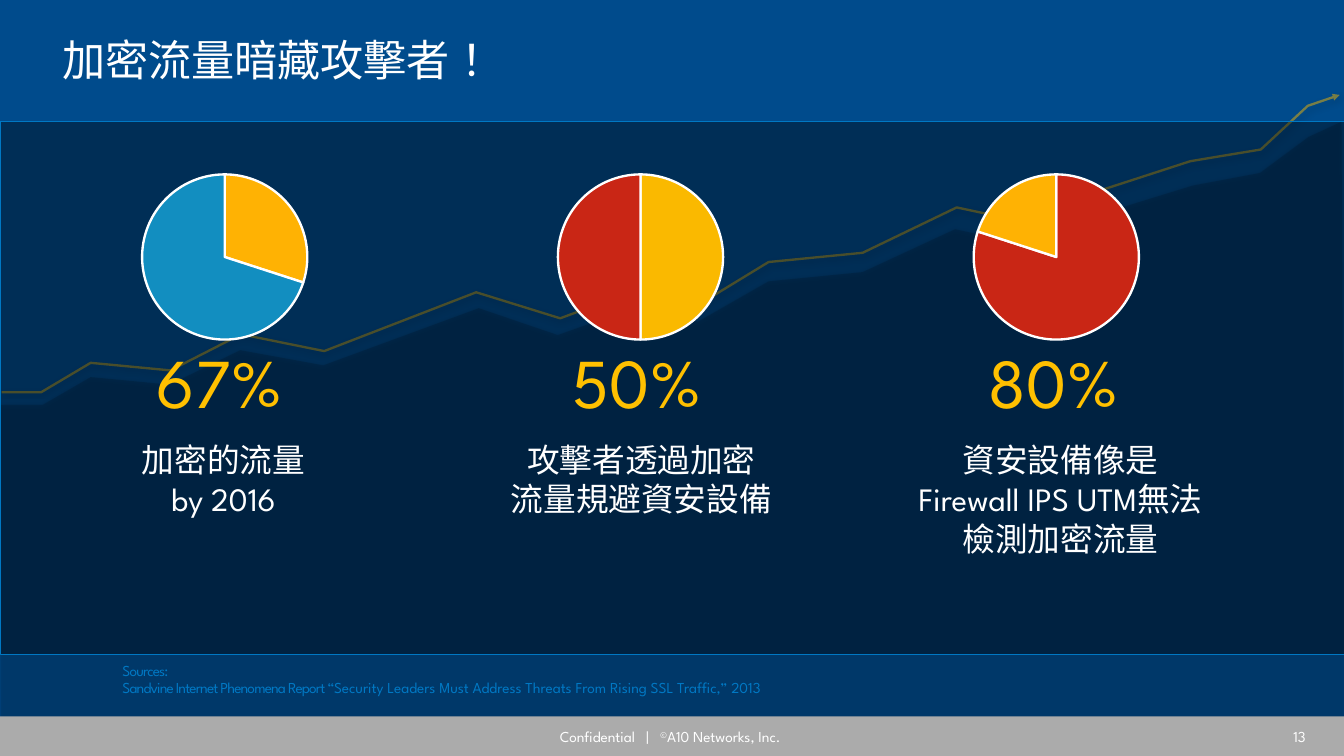
from lxml.etree import SubElement
from pptx import Presentation
from pptx.chart.data import CategoryChartData
from pptx.dml.color import RGBColor
from pptx.enum.chart import XL_CHART_TYPE as ChartType
from pptx.enum.shapes import MSO_SHAPE as Preset
from pptx.enum.text import MSO_ANCHOR as Anchor
from pptx.enum.text import MSO_AUTO_SIZE as AutoSize
from pptx.enum.text import PP_ALIGN as Align
from pptx.oxml import parse_xml
from pptx.oxml.ns import nsdecls, qn
from pptx.util import Inches, Pt

FONT = "League Spartan"
WHITE = RGBColor(0xFF, 0xFF, 0xFF)
BLACK = RGBColor(0, 0, 0)
BACKGROUND = RGBColor(0x00, 0x4B, 0x8C)
NAVY = RGBColor(0x00, 0x38, 0x69)
BRIGHT_BLUE = RGBColor(0x00, 0x78, 0xC3)
GRAY = RGBColor(0xAB, 0xAB, 0xAB)
GOLD = RGBColor(0xFA, 0xB9, 0x00)
AMBER = RGBColor(0xFF, 0xB2, 0x03)
YELLOW = RGBColor(0xFF, 0xC0, 0x00)
RED = RGBColor(0xC9, 0x26, 0x15)
CYAN = RGBColor(0x12, 0x8E, 0xC0)

TREND = [
    (0.02, 4.67), (0.49, 4.67), (1.08, 4.32), (2.03, 4.41), (2.87, 3.98),
    (3.86, 4.18), (5.67, 3.48), (6.67, 3.79), (7.58, 3.45), (8.33, 3.62),
    (9.15, 3.12), (10.27, 3.01), (11.39, 2.47), (12.14, 2.63), (12.66, 2.41),
    (14.17, 1.92), (15.01, 1.78), (15.57, 1.26), (15.95, 1.13),
]
MOUNTAIN = [
    (0, 4.82), (0.51, 4.82), (1.08, 4.49), (2.02, 4.58), (2.86, 4.17),
    (3.85, 4.35), (5.7, 3.67), (6.64, 3.99), (7.54, 3.67), (8.31, 3.83),
    (9.15, 3.35), (10.27, 3.24), (11.37, 2.73), (12.12, 2.89), (12.61, 2.7),
    (14.2, 2.21), (15, 2.06), (15.58, 1.63), (15.97, 1.45),
    (16.01, 8.59), (0.01, 8.55),
]

# Share, slice values, slice colours, caption paragraphs, caption left and width
FACTS = [
    ("67%", (30, 70), (AMBER, CYAN), ["加密的流量", "by 2016"], 1.3, 2.72),
    ("50%", (50, 50), (GOLD, RED), ["攻擊者透過加密", "流量規避資安設備"], 5.84, 3.59),
    ("80%", (80, 20), (RED, AMBER),
     ["資安設備像是Firewall IPS UTM無法檢測加密流量"], 10.83, 3.59),
]
FIRST_PIE, PIE_STEP = 1.49, 4.95


def inches(lengths):
    return [Inches(length) for length in lengths]


def add_text(slide, box, paragraphs, size, color=WHITE, align=Align.LEFT,
             anchor=Anchor.TOP, wrap=True, grow=False, inset=None,
             line_spacing=None):
    """Each paragraph is a string or a list of (text, run attributes)."""
    frame = slide.shapes.add_textbox(*inches(box)).text_frame
    frame.word_wrap = wrap
    frame.auto_size = AutoSize.SHAPE_TO_FIT_TEXT if grow else AutoSize.NONE
    frame.vertical_anchor = anchor
    if inset is not None:
        frame.margin_left = frame.margin_right = Inches(inset)
        frame.margin_top = frame.margin_bottom = Inches(inset)
    for index, content in enumerate(paragraphs):
        paragraph = frame.add_paragraph() if index else frame.paragraphs[0]
        paragraph.alignment = align
        paragraph.line_spacing = line_spacing
        runs = [(content, {})] if isinstance(content, str) else content
        for text, attributes in runs:
            run = paragraph.add_run()
            run.text = text
            run.font.name = FONT
            run.font.size = Pt(size)
            run.font.color.rgb = color
            for name, value in attributes.items():
                run._r.get_or_add_rPr().set(name, value)


def set_alpha(parent, percent):
    for color in parent.iter(qn("a:srgbClr")):
        SubElement(color, qn("a:alpha")).set("val", str(percent * 1000))


def style_shape(shape, fill=None, alpha=None, line=None, width=0.75):
    shape.shadow.inherit = False
    if fill is None:
        shape.fill.background()
    else:
        shape.fill.solid()
        shape.fill.fore_color.rgb = fill
        if alpha:
            set_alpha(shape._element.spPr.find(qn("a:solidFill")), alpha)
    if line is None:
        shape.line.fill.background()
    else:
        shape.line.color.rgb = line
        shape.line.width = Pt(width)


def add_panel(slide, preset, box, **style):
    panel = slide.shapes.add_shape(preset, *inches(box))
    style_shape(panel, **style)
    return panel


def add_outline(slide, points, close, **style):
    start, *rest = [inches(point) for point in points]
    builder = slide.shapes.build_freeform(*start)
    builder.add_line_segments(rest, close=close)
    outline = builder.convert_to_shape()
    style_shape(outline, **style)
    return outline


def add_shadow(shape, alpha, blur, distance):
    effects = shape._element.spPr.find(qn("a:effectLst"))
    effects.append(parse_xml(
        f'<a:outerShdw {nsdecls("a")} blurRad="{Pt(blur)}" dist="{Pt(distance)}" '
        f'dir="5400000" rotWithShape="0"><a:srgbClr val="000000">'
        f'<a:alpha val="{alpha * 1000}"/></a:srgbClr></a:outerShdw>'))


def add_pie(slide, left, values, colors):
    data = CategoryChartData()
    data.categories = ["1", "2"]
    data.add_series("Series 1", values)
    chart = slide.shapes.add_chart(
        ChartType.PIE, *inches((left, 1.94, 2.37, 2.24)), data).chart
    chart.has_legend = False
    chart.has_title = False
    chart.font.name = FONT
    chart.font.size = Pt(10)
    chart.font.color.rgb = BLACK
    plot = chart.plots[0]
    plot.vary_by_categories = True
    for index, color in enumerate(colors):
        piece = plot.series[0].points[index].format
        piece.fill.solid()
        piece.fill.fore_color.rgb = color
        piece.line.color.rgb = WHITE
        piece.line.width = Pt(2)
    # Fix the pie's size inside its frame
    plot_area = chart._chartSpace.chart.plotArea
    for old in plot_area.findall(qn("c:layout")):
        plot_area.remove(old)
    sizes = "".join(f'<c:{tag} val="{value}"/>' for tag, value in (
        ("layoutTarget", "inner"), ("xMode", "edge"), ("yMode", "edge"),
        ("x", 0.085), ("y", 0.06), ("w", 0.83), ("h", 0.88)))
    plot_area.insert(0, parse_xml(
        f'<c:layout {nsdecls("c")}><c:manualLayout>{sizes}'
        f'</c:manualLayout></c:layout>'))


def add_footer(slide):
    add_panel(slide, Preset.RECTANGLE, (0, 8.53, 16, 0.47), fill=GRAY)
    add_text(slide, (15.27, 8.66, 0.4, 0.22), ["13"], 13, align=Align.CENTER,
             anchor=Anchor.MIDDLE, inset=0)
    add_text(slide, (6.15, 8.62, 3.7, 0.3),
             [[("Confidential   |   ", {}), ("©", {"baseline": "30000"}),
               ("A10 Networks, Inc. ", {})]],
             13, align=Align.CENTER, anchor=Anchor.MIDDLE)


def add_backdrop(slide):
    trend = add_outline(slide, TREND, False, line=GOLD, width=2)
    trend_line = trend._element.spPr.find(qn("a:ln"))
    set_alpha(trend_line, 48)
    SubElement(trend_line, qn("a:tailEnd")).set("type", "triangle")
    add_shadow(trend, 38, 3.1, 1.6)
    mountain = add_outline(slide, MOUNTAIN, True, fill=NAVY, alpha=70)
    add_shadow(mountain, 35, 3.1, 1.8)
    veil = add_panel(slide, Preset.ROUNDED_RECTANGLE, (0, 1.45, 16, 6.34),
                     fill=BLACK, alpha=38, line=BRIGHT_BLUE)
    veil.adjustments[0] = 0


def main():
    deck = Presentation()
    deck.slide_width, deck.slide_height = Inches(16), Inches(9)
    slide = deck.slides.add_slide(deck.slide_layouts[6])
    slide.background.fill.solid()
    slide.background.fill.fore_color.rgb = BACKGROUND

    add_backdrop(slide)
    add_footer(slide)

    # Title
    add_text(slide, (0.74, 0.34, 14.56, 0.8),
             [[("加密流量暗藏攻擊者！", {"lang": "zh-TW"})]], 37,
             anchor=Anchor.MIDDLE, inset=0, line_spacing=0.95)

    # Three facts, each with a pie, a share and a caption
    for column, (share, values, colors, caption, left, width) in enumerate(FACTS):
        pie_left = FIRST_PIE + column * PIE_STEP
        add_pie(slide, pie_left, values, colors)
        add_text(slide, (pie_left + 0.28, 3.98, 1.79, 1.11), [share], 60,
                 color=YELLOW, wrap=False, grow=True)
        add_text(slide, (left, 5.19, width, 1.04), caption, 28,
                 align=Align.CENTER, grow=True)

    # Sources
    tight = {"spc": "-70"}
    add_text(slide, (1.36, 7.85, 13.09, 0.5),
             [[("Sources:", tight)],
              [("Sandvine Internet Phenomena Report “", tight),
               ("Security Leaders Must Address Threats From Rising SSL Traffic,” 2013", {})]],
             13, color=BRIGHT_BLUE, grow=True, line_spacing=0.9)

    deck.save("out.pptx")


if __name__ == "__main__":
    main()
